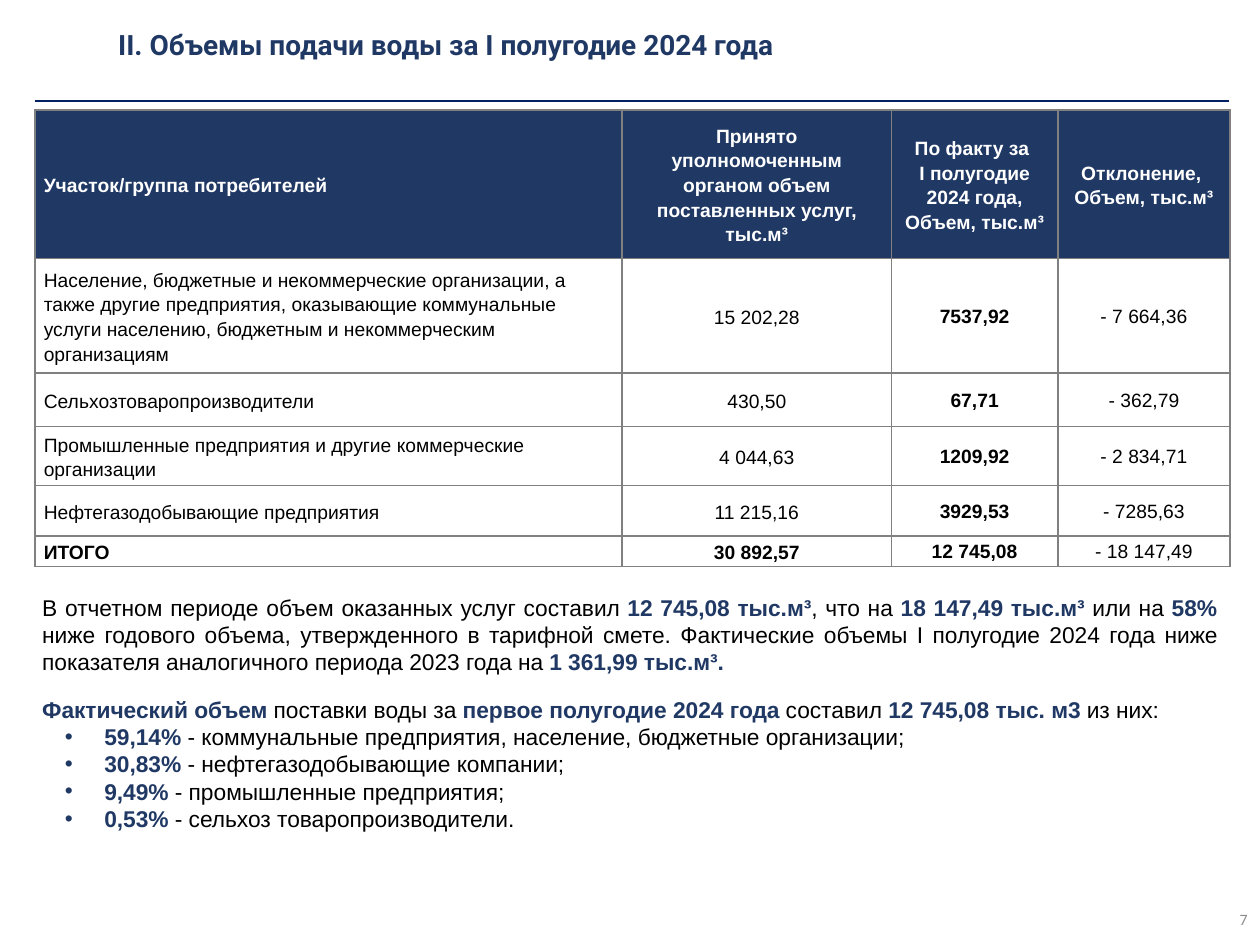
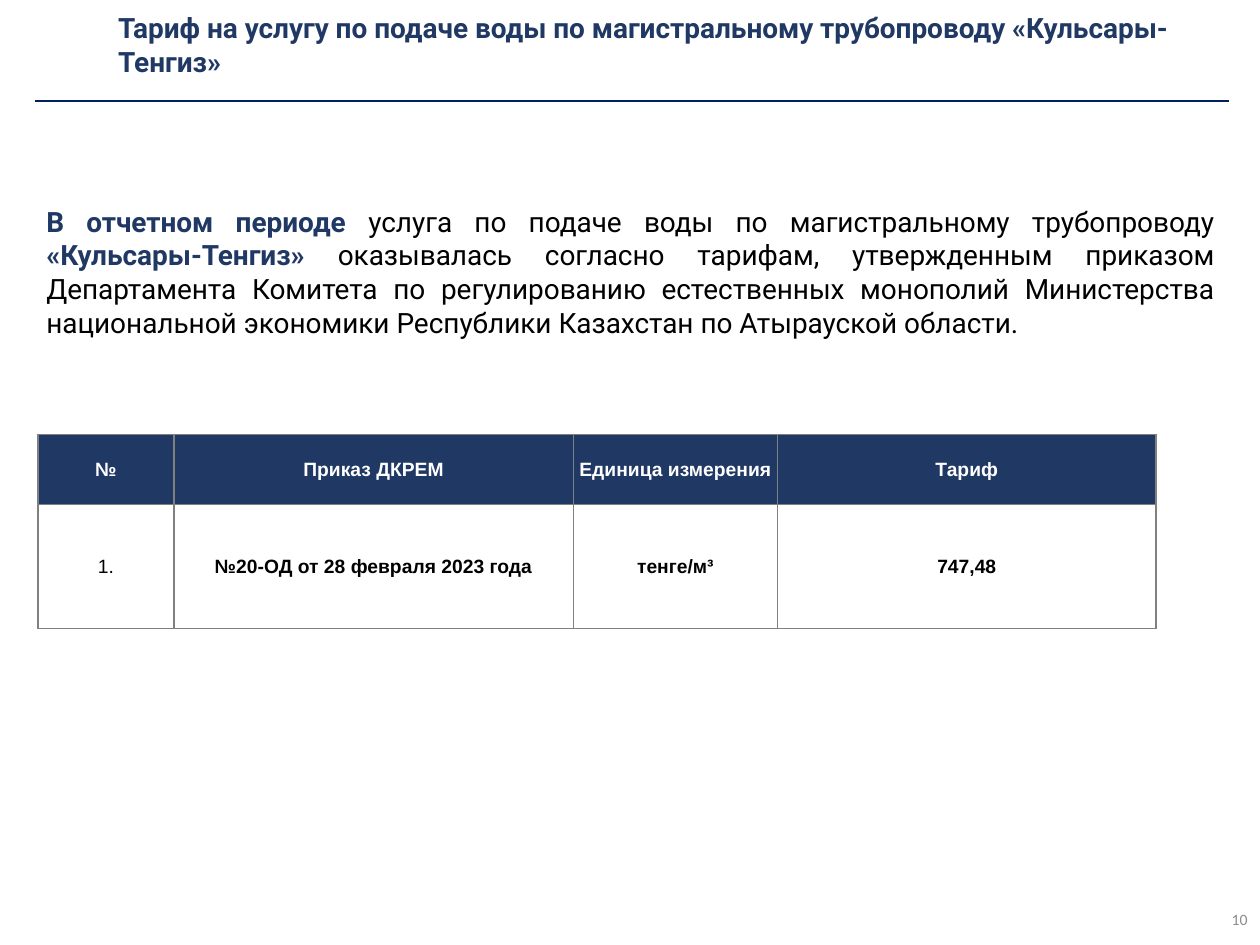
from lxml import etree
from pptx import Presentation
from pptx import util as u
from pptx.dml.color import RGBColor
from pptx.enum import shapes, text
from pptx.oxml.ns import qn

NAVY, RULE, BLACK, WHITE = "203864", "002060", "000000", "FFFFFF"
GREY, BORDER = "8C8C8C", "808080"
BODY, HEADING, NUMBER = "Arial", "Roboto", "Calibri"
LEFT, CENTER, RIGHT, JUSTIFY = (text.PP_ALIGN.LEFT, text.PP_ALIGN.CENTER,
                                text.PP_ALIGN.RIGHT, text.PP_ALIGN.JUSTIFY)
TOP, MIDDLE = text.MSO_ANCHOR.TOP, text.MSO_ANCHOR.MIDDLE


def rgb(hex_color):
    return RGBColor.from_string(hex_color)


def style(font, name, size, color, bold=False):
    font.name, font.size, font.bold = name, u.Pt(size), bold
    font.color.rgb = rgb(color)


def add_borders(cell):
    tc_pr = cell._tc.get_or_add_tcPr()
    for side in ("L", "R", "T", "B"):
        ln = etree.SubElement(tc_pr, qn(f"a:ln{side}"), w=str(u.Pt(1)))
        fill = etree.SubElement(ln, qn("a:solidFill"))
        etree.SubElement(fill, qn("a:srgbClr"), val=BORDER)


def add_bullet(p):
    p_pr = p._p.get_or_add_pPr()
    p_pr.set("marL", str(u.Pt(35.5)))
    p_pr.set("indent", str(u.Pt(-22.5)))
    etree.SubElement(p_pr, qn("a:buFont"), typeface=BODY)
    etree.SubElement(p_pr, qn("a:buChar"), char="•")


class Deck:
    def __init__(self):
        self.prs = Presentation()
        self.prs.slide_width, self.prs.slide_height = u.Pt(720), u.Pt(540)
        self.s = None

    def slide(self, title, number):
        self.s = self.prs.slides.add_slide(self.prs.slide_layouts[6])
        self.label(title, (60.5, 10, 643, 30.5), HEADING, 16, NAVY, bold=True)
        self.label(number, (558, 511, 162, 29), NUMBER, 9, GREY, RIGHT)
        self.rule(20, 702, 57.6)

    def box(self, at, anchor):
        tf = self.s.shapes.add_textbox(*map(u.Pt, at)).text_frame
        tf.word_wrap, tf.vertical_anchor = True, anchor
        return tf

    def label(self, words, at, font, size, color, align=LEFT, bold=False):
        tf = self.box(at, MIDDLE)
        tf.text = words
        p = tf.paragraphs[0]
        p.alignment = align
        style(p.runs[0].font, font, size, color, bold)

    def rule(self, x1, x2, y):
        line = self.s.shapes.add_connector(shapes.MSO_CONNECTOR.STRAIGHT,
                                           *map(u.Pt, (x1, y, x2, y)))
        line.line.color.rgb, line.line.width = rgb(RULE), u.Pt(1)
        etree.SubElement(line._element.spPr, qn("a:effectLst"))

    def prose(self, paragraphs, at, font, size, anchor=TOP, gap=0, bullets=()):
        """Justified text; words between asterisks are bold navy."""
        tf = self.box(at, anchor)
        for i, words in enumerate([*paragraphs, *bullets]):
            p = tf.paragraphs[0] if i == 0 else tf.add_paragraph()
            p.alignment = JUSTIFY
            if i >= len(paragraphs):
                add_bullet(p)
            elif i:
                p.space_before = u.Pt(gap)
            for j, part in enumerate(words.split("*")):
                if part:
                    r = p.add_run()
                    r.text = part
                    strong = j % 2 == 1
                    style(r.font, font, size, NAVY if strong else BLACK, strong)

    def table(self, rows, left, top, widths, heights, is_bold, is_roomy, left_cols=()):
        """is_bold and is_roomy take (row, column); roomy cells have wide margins and spacing."""
        frame = self.s.shapes.add_table(len(rows), len(widths), *map(
            u.Pt, (left, top, sum(widths), sum(heights))))
        table = frame.table
        table.first_row = table.horz_banding = False
        for column, width in zip(table.columns, widths):
            column.width = u.Pt(width)
        for row, height in zip(table.rows, heights):
            row.height = u.Pt(height)
        for r, row in enumerate(rows):
            for c, words in enumerate(row):
                cell, header, roomy = table.cell(r, c), r == 0, is_roomy(r, c)
                add_borders(cell)
                if header:
                    cell.fill.solid()
                    cell.fill.fore_color.rgb = rgb(NAVY)
                else:
                    cell.fill.background()
                cell.vertical_anchor = MIDDLE
                cell.margin_left = cell.margin_right = u.Pt(5 if roomy else 0.6)
                cell.margin_top = u.Pt(0 if roomy else 0.6)
                cell.margin_bottom = u.Pt(0)
                cell.text = words
                p = cell.text_frame.paragraphs[0]
                p.alignment = LEFT if c in left_cols else CENTER
                p.line_spacing = 1.15 if roomy else 1.0
                for run in p.runs:
                    style(run.font, BODY, 11, WHITE if header else BLACK,
                          header or is_bold(r, c))


def volumes_slide(deck):
    deck.slide("II. Объемы подачи воды за I полугодие 2024 года", "7")
    rows = [
        ("Участок/группа потребителей",
         "Принято уполномоченным органом объем поставленных услуг, тыс.м³",
         "По факту за \vI полугодие 2024 года, Объем, тыс.м³",
         "Отклонение, \vОбъем, тыс.м³"),
        ("Население, бюджетные и некоммерческие организации, а также другие "
         "предприятия, оказывающие коммунальные услуги населению, бюджетным "
         "и некоммерческим организациям", "15 202,28", "7537,92", "- 7 664,36"),
        ("Сельхозтоваропроизводители", "430,50", "67,71", "- 362,79"),
        ("Промышленные предприятия и другие коммерческие организации",
         "4 044,63", "1209,92", "- 2 834,71"),
        ("Нефтегазодобывающие предприятия", "11 215,16", "3929,53", "- 7285,63"),
        ("ИТОГО", "30 892,57", "12 745,08", "- 18 147,49"),
    ]
    total = len(rows) - 1
    deck.table(rows, 20, 62.8, (335.5, 154, 95, 98.5),
               (85, 65.5, 30.5, 33.8, 28.8, 17.3),
               is_bold=lambda r, c: c == 2 or (r == total and c < 3),
               is_roomy=lambda r, c: r == 0 or c < 2, left_cols=(0,))
    deck.prose(
        ["В отчетном периоде объем оказанных услуг составил *12 745,08 тыс.м³*, что на "
         "*18 147,49 тыс.м³ *или на *58% *ниже годового объема, утвержденного в тарифной "
         "смете. Фактические объемы I полугодие 2024 года ниже показателя аналогичного "
         "периода 2023 года на *1 361,99 тыс.м³.*",
         "*Фактический объем* поставки воды за *первое полугодие 2024 года *составил "
         "*12 745,08 тыс. м3 *из них:"],
        (17, 335.5, 685.5, 145.5), BODY, 13, gap=11.5,
        bullets=["*59,14%* - коммунальные предприятия, население, бюджетные организации;",
                 "*30,83%* - нефтегазодобывающие компании;",
                 "*9,49%* - промышленные предприятия;",
                 "*0,53%* - сельхоз товаропроизводители."])


def tariff_slide(deck):
    deck.slide("Тариф на услугу по подаче воды по магистральному трубопроводу "
               "«Кульсары-Тенгиз»", "10")
    deck.prose(
        ["*В отчетном периоде *услуга по подаче воды по магистральному трубопроводу "
         "*«Кульсары-Тенгиз» *оказывалась согласно тарифам, утвержденным приказом "
         "Департамента Комитета по регулированию естественных монополий Министерства "
         "национальной экономики Республики Казахстан по Атырауской области."],
        (19.4, 43.2, 682, 224), HEADING, 16, MIDDLE)
    rows = [("№", "Приказ ДКРЕМ", "Единица измерения", "Тариф"),
            ("1.", "№20-ОД от 28 февраля 2023 года", "тенге/м³", "747,48")]
    deck.table(rows, 21.6, 248.3, (77.8, 228.2, 116.8, 216.2), (40, 71),
               is_bold=lambda r, c: c > 0, is_roomy=lambda r, c: False)


def main():
    deck = Deck()
    volumes_slide(deck)
    tariff_slide(deck)
    deck.prs.save("out.pptx")


if __name__ == "__main__":
    main()
